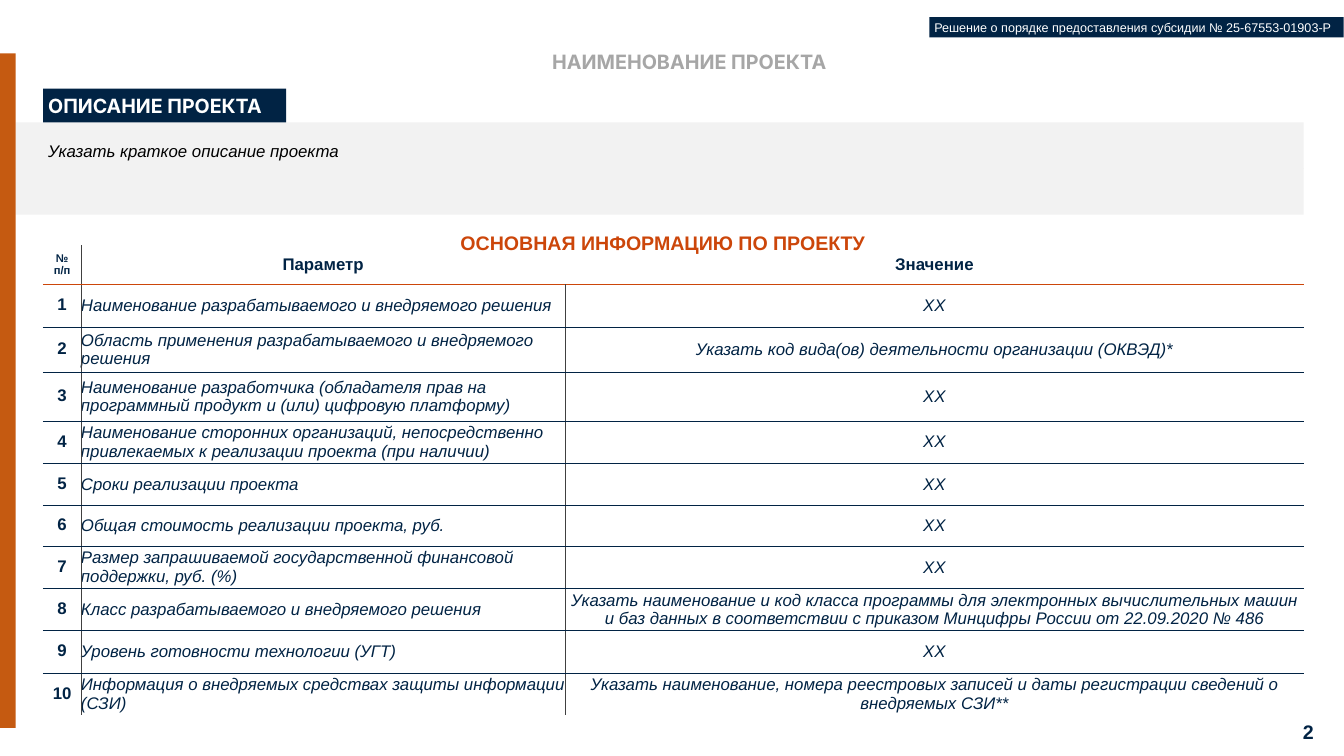
from lxml import etree
from pptx import Presentation
from pptx.dml.color import RGBColor
from pptx.enum import shapes, text
from pptx.oxml import ns
from pptx.util import Cm, Pt

COLORS = {
    "navy": "012344", "orange": "CC460A", "rust": "C55A11", "panel": "F2F2F2",
    "gray": "A6A6A6", "rule": "404040", "white": "FFFFFF", "black": "000000",
}
LEFT = 2.18
PANEL_LEFT, PANEL_WIDTH = 0.79, 64.92
COLUMNS = (1.9, 24.41, 37.21)
ROW_HEIGHTS = (1.98, 2.13, 2.29, 2.44, 2.13, 2.13, 2.06, 2.13, 2.13, 2.13, 2.13)
HEADERS = ("№ п/п", "Параметр", "Значение")
PARAMETERS = (
    ("Наименование разрабатываемого и внедряемого решения", "ХХ"),
    ("Область применения разрабатываемого и внедряемого решения",
     "Указать код вида(ов) деятельности организации (ОКВЭД)*"),
    ("Наименование разработчика (обладателя прав на программный продукт "
     "и (или) цифровую платформу)", "ХХ"),
    ("Наименование сторонних организаций, непосредственно привлекаемых "
     "к реализации проекта (при наличии)", "ХХ"),
    ("Сроки реализации проекта", "ХХ"),
    ("Общая стоимость реализации проекта, руб.", "ХХ"),
    ("Размер запрашиваемой государственной финансовой поддержки, руб. (%)", "ХХ"),
    ("Класс разрабатываемого и внедряемого решения",
     "Указать наименование и код класса программы для электронных вычислительных "
     "машин и баз данных в соответствии с приказом Минцифры России "
     "от 22.09.2020 № 486"),
    ("Уровень готовности технологии (УГТ)", "ХХ"),
    ("Информация о внедряемых средствах защиты информации (СЗИ)",
     "Указать наименование, номера реестровых записей и даты регистрации "
     "сведений о внедряемых СЗИ**"),
)


def rgb(name):
    return RGBColor.from_string(COLORS[name])


def place(sp, left, top, width, height):
    sp.left, sp.top, sp.width, sp.height = Cm(left), Cm(top), Cm(width), Cm(height)


def format_paragraph(p, size, color, font="Arial", bold=False, italic=False,
                     align=text.PP_ALIGN.LEFT):
    p.alignment = align
    p.font.size, p.font.name = Pt(size), font
    p.font.bold, p.font.italic = bold, italic
    p.font.color.rgb = rgb(color)


def write(sp, words, size, color, inset=0.25, wrap=True,
          anchor=text.MSO_ANCHOR.TOP, **style):
    """Fill a shape with one paragraph; an inset of None keeps the default margins."""
    tf = sp.text_frame
    tf.text = words
    tf.word_wrap = wrap
    tf.auto_size = text.MSO_AUTO_SIZE.NONE
    tf.vertical_anchor = anchor
    if inset is not None:
        tf.margin_left = tf.margin_right = tf.margin_top = tf.margin_bottom = Cm(inset)
    format_paragraph(tf.paragraphs[0], size, color, **style)


def add_rect(s, box, color):
    sp = s.shapes.add_shape(shapes.MSO_SHAPE.RECTANGLE, *map(Cm, box))
    sp.shadow.inherit = False
    sp.fill.solid()
    sp.fill.fore_color.rgb = rgb(color)
    sp.line.fill.background()
    return sp


def add_text(s, box, words, size, color, **style):
    write(s.shapes.add_textbox(*map(Cm, box)), words, size, color, **style)


def set_borders(cell, borders):
    """Draw borders given as (side, colour, points), in the order L, R, T, B."""
    tc_pr = cell._tc.get_or_add_tcPr()
    for i, (side, color, width) in enumerate(borders):
        ln = etree.Element(ns.qn(f"a:ln{side}"), w=str(Pt(width)))
        fill = etree.SubElement(ln, ns.qn("a:solidFill"))
        etree.SubElement(fill, ns.qn("a:srgbClr"), val=COLORS[color])
        tc_pr.insert(i, ln)


def cell_borders(row, col):
    borders = []
    if col > 0 and (row > 0 or col == 1):
        borders.append(("L", "rule", 0.5))
    if col < 2 and (row > 0 or col == 0):
        borders.append(("R", "rule", 0.5))
    if row > 0:
        borders.append(("T", "orange" if row == 1 else "navy", 1))
    if row < len(PARAMETERS):
        borders.append(("B", "orange" if row == 0 else "navy", 1))
    return borders


def fill_cell(cell, words, row, col):
    cell.text = words
    cell.vertical_anchor = text.MSO_ANCHOR.MIDDLE
    cell.fill.background()
    if row == 0:
        cell.margin_left = cell.margin_right = Cm(0.3)
    elif col > 0:
        cell.margin_left = cell.margin_right = cell.margin_top = cell.margin_bottom = 0
    strong = row == 0 or col == 0
    left = row > 0 and col == 1
    p = cell.text_frame.paragraphs[0]
    format_paragraph(p, 16 if row == col == 0 else 24, "navy",
                     bold=strong, italic=not strong,
                     align=text.PP_ALIGN.LEFT if left else text.PP_ALIGN.CENTER)
    if col == 0:
        p.line_spacing = 0.9
    set_borders(cell, cell_borders(row, col))


def add_parameter_table(s):
    rows = [HEADERS] + [(str(n), *pair) for n, pair in enumerate(PARAMETERS, 1)]
    table = s.shapes.add_table(len(rows), len(COLUMNS), Cm(LEFT), Cm(12.37),
                               Cm(sum(COLUMNS)), Cm(sum(ROW_HEIGHTS))).table
    table.first_row = table.horz_banding = False
    for column, width in zip(table.columns, COLUMNS):
        column.width = Cm(width)
    for i, (height, row) in enumerate(zip(ROW_HEIGHTS, rows)):
        table.rows[i].height = Cm(height)
        for j, words in enumerate(row):
            fill_cell(table.cell(i, j), words, i, j)


def main():
    prs = Presentation()
    prs.slide_width, prs.slide_height = Cm(67.74), Cm(38.1)
    s = prs.slides.add_slide(prs.slide_layouts[5])

    title = s.shapes.title
    place(title, 4.88, 2.39, 59.72, 1.47)
    write(title, "НАИМЕНОВАНИЕ ПРОЕКТА", 28.2, "gray", inset=None,
          font="Inter", bold=True, align=text.PP_ALIGN.CENTER)

    for top in (8.48, 6.17):
        add_rect(s, (PANEL_LEFT, top, PANEL_WIDTH, 2.34), "panel")
    add_text(s, (64.49, 36.12, 2.06, 1.55), "2", 28, "navy", inset=0.33, bold=True,
             anchor=text.MSO_ANCHOR.MIDDLE, align=text.PP_ALIGN.RIGHT)
    heading = add_rect(s, (LEFT, 4.47, 12.24, 1.7), "navy")
    write(heading, "ОПИСАНИЕ ПРОЕКТА", 28, "white", font="Inter", bold=True)
    add_rect(s, (0, 2.69, PANEL_LEFT, 33.99), "rust")
    add_text(s, (LEFT, 6.86, 17.35, 1.55), "Указать краткое описание проекта",
             24, "black", italic=True)

    add_parameter_table(s)
    add_text(s, (22.96, 11.4, 21.95, 1.7), "ОСНОВНАЯ ИНФОРМАЦИЮ ПО ПРОЕКТУ",
             28, "orange", bold=True)
    decision = add_rect(s, (46.84, 0.86, 20.88, 1.02), "navy")
    write(decision, "Решение о порядке предоставления субсидии № 25-67553-01903-Р",
          18, "white", inset=None, wrap=False)

    prs.save("out.pptx")


if __name__ == "__main__":
    main()
